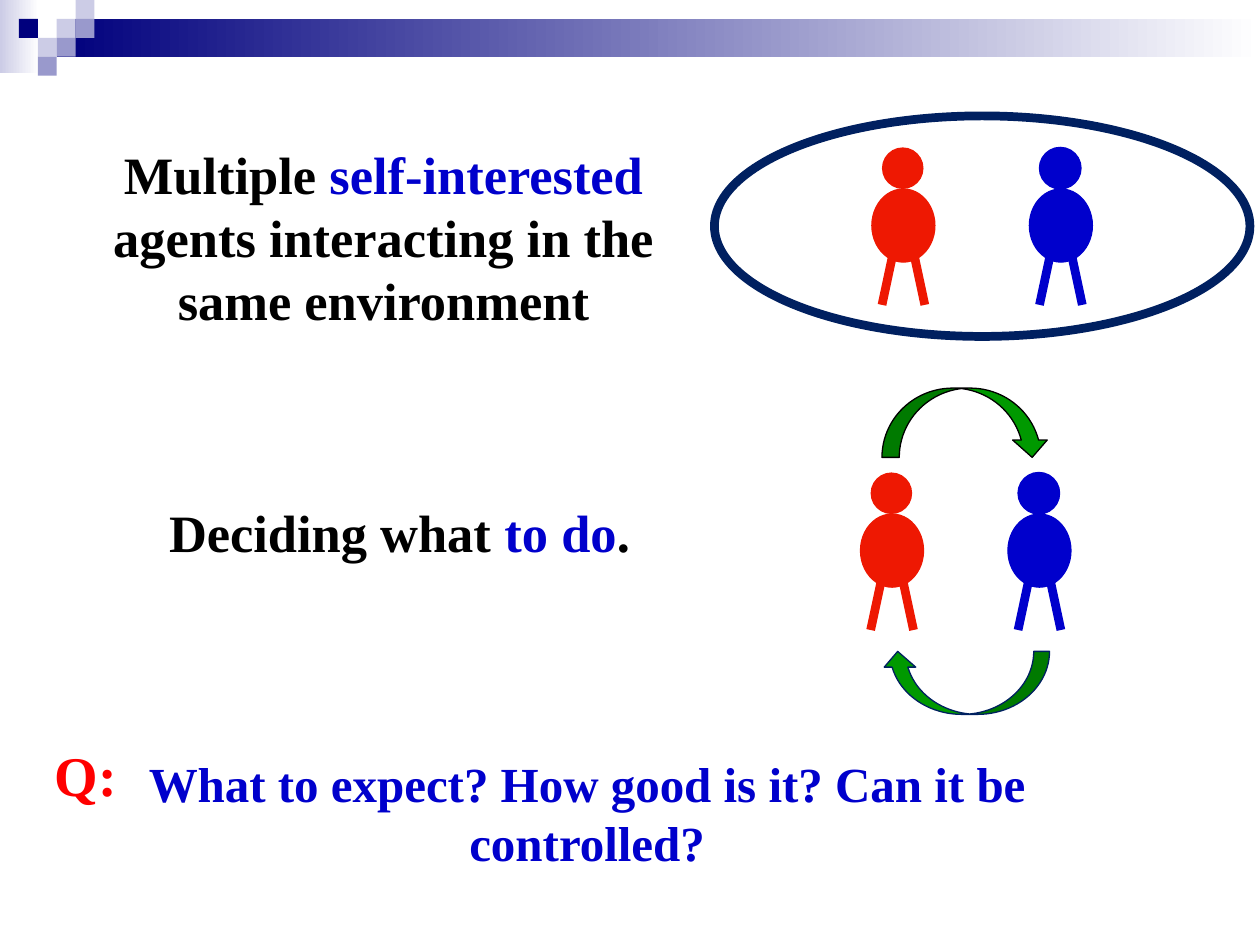
"""Build a slide on self-interested agents sharing one environment."""
from typing import NamedTuple, Optional

from lxml import etree
from pptx import Presentation, util as u
from pptx.dml.color import RGBColor
from pptx.enum import shapes, text
from pptx.oxml.ns import qn

RED, BLUE, BLACK, GREEN = "EE1802", "0000CC", "000000", "009900"
NAVY, DEEP, LILAC, PALE, WHITE = "002060", "00007D", "9999CC", "CCCCE6", "FFFFFF"
KIND = shapes.MSO_SHAPE
TILE = 0.15


class Box(NamedTuple):
    left: float
    top: float
    width: float
    height: float


class Tile(NamedTuple):
    column: int
    row: int
    color: str


class Agent(NamedTuple):
    left: float
    top: float
    color: str
    head_line: Optional[str] = None


class Caption(NamedTuple):
    box: Box
    size: int
    runs: list
    hang: float = 0
    before: float = 0
    inset: float = 0.1
    wrap: bool = True


TILES = [
    Tile(1, 1, PALE), Tile(2, 0, PALE), Tile(2, 1, LILAC), Tile(0, 2, PALE),
    Tile(-1, 1, DEEP), Tile(1, 2, LILAC), Tile(0, 3, LILAC),
]
AGENTS = [
    Agent(6.92, 1.5, RED), Agent(8.17, 1.5, BLUE, BLUE),
    Agent(6.83, 4.08, RED), Agent(8, 4.08, BLUE, BLUE),
]
CAPTIONS = [
    Caption(Box(0.17, 1.08, 5.33, 1.83), 30,
            [("Multiple ", BLACK), ("self-interested ", BLUE),
             ("agents interacting in the same environment", BLACK)], 0.42, 6),
    Caption(Box(0.17, 3.92, 5.58, 1), 30,
            [("Deciding what ", BLACK), ("to do", BLUE), (".", BLACK)], 0.42, 6),
    Caption(Box(0.33, 5.83, 0.7, 0.64), 32, [("Q:", "FF0000")], wrap=False),
    Caption(Box(1.08, 5.93, 7.16, 1.03), 28,
            [("What to expect? How good is it? Can it be controlled?", BLUE)],
            inset=0.05),
]


def rgb(color: str) -> RGBColor:
    """Turn a hex string into a colour."""
    return RGBColor.from_string(color)


def add_figure(parent, kind, box: Box, fill: Optional[str] = None,
               line: Optional[str] = None, weight: float = 0.75):
    """Add a preset shape with an optional fill and outline."""
    figure = parent.add_shape(kind, *map(u.Inches, box))
    figure.shadow.inherit = False
    if fill:
        figure.fill.solid()
        figure.fill.fore_color.rgb = rgb(fill)
    else:
        figure.fill.background()
    if line:
        figure.line.color.rgb = rgb(line)
        figure.line.width = u.Pt(weight)
    else:
        figure.line.fill.background()
    return figure


def add_fade(parent, box: Box, color: str) -> None:
    """Add a rectangle that fades to white on the right."""
    fill = add_figure(parent, KIND.RECTANGLE, box).fill
    fill.gradient()
    fill.gradient_angle = 0
    for stop, shade in zip(fill.gradient_stops, (color, WHITE)):
        stop.color.rgb = rgb(shade)


def add_banner(parent) -> None:
    """Add the fading bars and the mosaic of tiles."""
    banner = parent.add_group_shape().shapes
    add_fade(banner, Box(0, 0, 0.31, 0.58), PALE)
    add_fade(banner, Box(0.45, TILE, 9.55, 0.3), DEEP)
    for tile in TILES:
        box = Box(0.3 + tile.column * TILE, tile.row * TILE, TILE, TILE)
        add_figure(banner, KIND.RECTANGLE, box, tile.color)


def add_agent(parent, agent: Agent) -> None:
    """Add one stick person as a group."""
    left, top, color, head_line = agent
    person = parent.add_group_shape().shapes
    add_figure(person, KIND.OVAL, Box(left, top, 0.5, 0.58), color, color)
    add_figure(person, KIND.OVAL, Box(left + 0.08, top - 0.33, 0.33, 0.33), color, head_line)
    for hip, foot in ((0.17, 0.08), (0.33, 0.42)):
        ends = (left + hip, top + 0.5, left + foot, top + 0.92)
        leg = person.add_connector(shapes.MSO_CONNECTOR.STRAIGHT, *map(u.Inches, ends))
        leg.line.color.rgb = rgb(color)
        leg.line.width = u.Pt(5)
        etree.SubElement(leg._element.spPr, qn("a:effectLst"))


def add_caption(parent, caption: Caption) -> None:
    """Add a centred bold text with coloured runs."""
    frame = parent.add_textbox(*map(u.Inches, caption.box)).text_frame
    frame.word_wrap = caption.wrap
    frame.vertical_anchor = text.MSO_ANCHOR.TOP
    frame.margin_left = frame.margin_right = u.Inches(caption.inset)
    paragraph = frame.paragraphs[0]
    paragraph.alignment = text.PP_ALIGN.CENTER
    paragraph.space_before = u.Pt(caption.before)
    paragraph.font.name = "Times New Roman"
    paragraph.font.size = u.Pt(caption.size)
    paragraph.font.bold = True
    if caption.hang:
        paragraph._p.get_or_add_pPr().set("marL", str(u.Inches(caption.hang)))
    for words, color in caption.runs:
        run = paragraph.add_run()
        run.text = words
        run.font.color.rgb = rgb(color)


def main() -> None:
    """Build and save the slide."""
    deck = Presentation()
    deck.slide_width, deck.slide_height = u.Inches(10), u.Inches(7.5)
    parts = deck.slides.add_slide(deck.slide_layouts[6]).shapes
    add_banner(parts)
    for agent in AGENTS:
        add_agent(parts, agent)
    add_figure(parts, KIND.OVAL, Box(5.67, 0.92, 4.25, 1.75), line=NAVY, weight=5)
    add_figure(parts, KIND.CURVED_DOWN_ARROW, Box(7, 3.08, 1.33, 0.55), GREEN, BLACK)
    reply = add_figure(parts, KIND.CURVED_UP_ARROW, Box(7, 5.17, 1.33, 0.5), GREEN, NAVY)
    reply._element.spPr.xfrm.set("flipH", "1")
    for caption in CAPTIONS:
        add_caption(parts, caption)
    deck.save("out.pptx")


if __name__ == "__main__":
    main()
